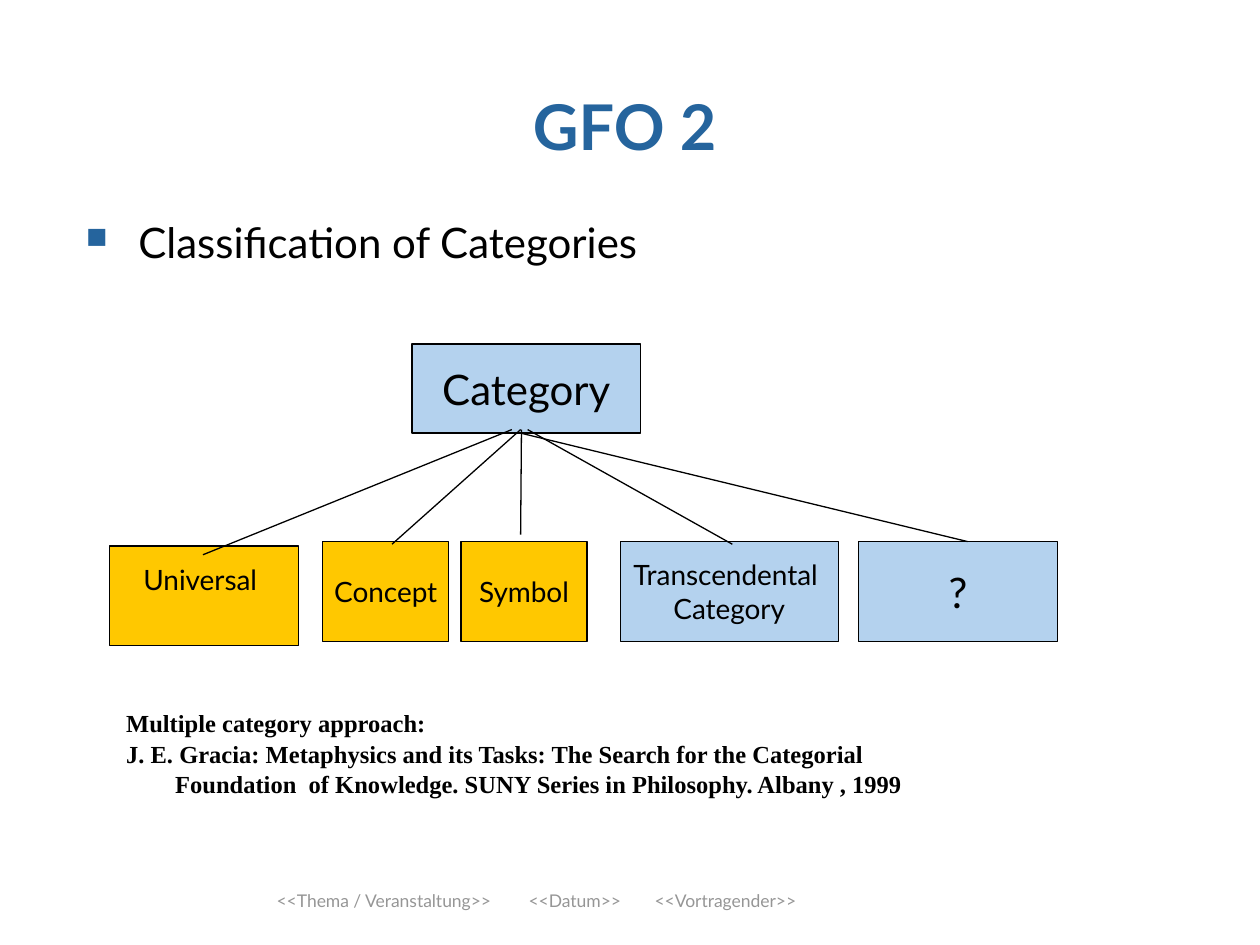
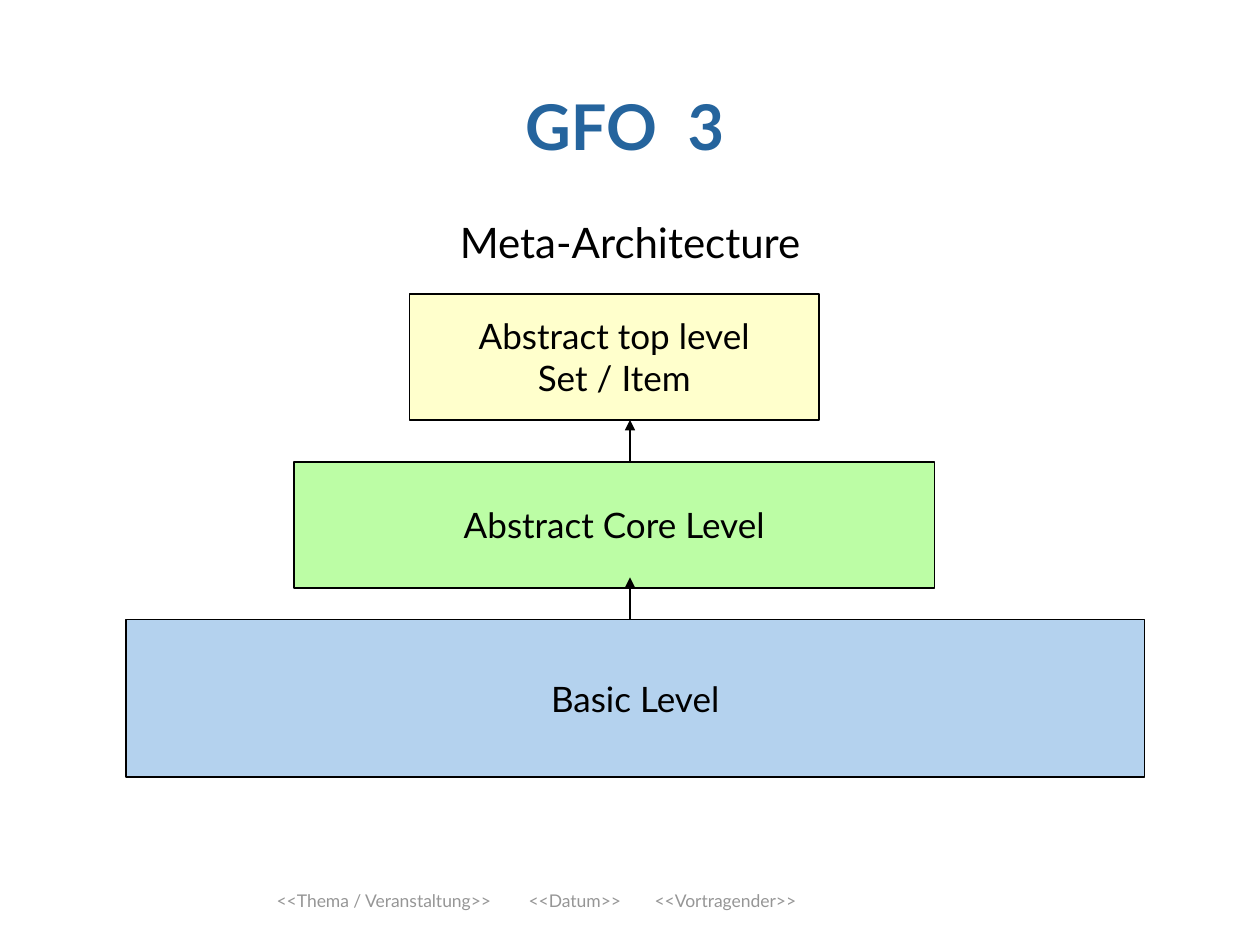
from pptx import Presentation
from pptx.dml.color import RGBColor
from pptx.enum.shapes import MSO_CONNECTOR, MSO_SHAPE
from pptx.enum.text import MSO_ANCHOR, PP_ALIGN
from pptx.oxml.ns import qn
from pptx.util import Pt
from lxml import etree

LEFT, CENTER = PP_ALIGN.LEFT, PP_ALIGN.CENTER
TOP, MIDDLE, BOTTOM = MSO_ANCHOR.TOP, MSO_ANCHOR.MIDDLE, MSO_ANCHOR.BOTTOM
RECTANGLE, STRAIGHT = MSO_SHAPE.RECTANGLE, MSO_CONNECTOR.STRAIGHT

BLACK = RGBColor(0x00, 0x00, 0x00)
GREY = RGBColor(0x96, 0x96, 0x96)
TITLE_BLUE = RGBColor(0x25, 0x64, 0x9D)
LIGHT_BLUE = RGBColor(0xB4, 0xD2, 0xEE)
AMBER = RGBColor(0xFF, 0xC8, 0x00)
CREAM = RGBColor(0xFF, 0xFF, 0xCC)
GREEN = RGBColor(0xBC, 0xFD, 0xA5)

FOOTER = "<<Thema / Veranstaltung>>\t<<Datum>>\t<<Vortragender>>"
MARGINS = {"margin_left": Pt(7.2), "margin_right": Pt(7.2),
           "margin_top": Pt(3.6), "margin_bottom": Pt(3.6)}
LINE_WIDTH = Pt(0.75)


def apply(target, values):
    for name, value in values.items():
        setattr(target, name, value)


def font_format(size, bold=False, name="Lato"):
    return {"size": Pt(size), "bold": bold, "name": name}


class Deck:
    """Holds the shared style and the slide being filled."""

    def __init__(self):
        self.presentation = Presentation()
        self.presentation.slide_width = Pt(720)
        self.presentation.slide_height = Pt(540)
        self.slide = None

    def start_slide(self, title):
        self.slide = self.presentation.slides.add_slide(
            self.presentation.slide_layouts[6])
        self.text(FOOTER, (110, 504.5, 393, 19.5), font_format(10), GREY,
                  CENTER, BOTTOM)
        self.text(title, (30, 12, 654, 84.5), font_format(36, True),
                  TITLE_BLUE, CENTER, BOTTOM)

    def fill_frame(self, frame, text, font, color, align, line_spacing=None):
        frame.text = text
        for paragraph in frame.paragraphs:
            apply(paragraph, {"alignment": align,
                              "line_spacing": line_spacing})
            for run in paragraph.runs:
                apply(run.font, font)
                run.font.color.rgb = color

    def text(self, text, bounds, font, color=BLACK, align=LEFT, anchor=TOP,
             line_spacing=None):
        frame = self.slide.shapes.add_textbox(*map(Pt, bounds)).text_frame
        apply(frame, {**MARGINS, "word_wrap": True, "vertical_anchor": anchor})
        self.fill_frame(frame, text, font, color, align, line_spacing)
        return frame.paragraphs

    def indent(self, paragraph, left, first=0):
        properties = paragraph._p.get_or_add_pPr()
        properties.set("marL", str(Pt(left)))
        properties.set("indent", str(Pt(first)))
        return properties

    def bullet(self, paragraph):
        properties = self.indent(paragraph, 30, -30)
        color = etree.SubElement(properties, qn("a:buClr"))
        etree.SubElement(color, qn("a:srgbClr"), val=str(TITLE_BLUE))
        etree.SubElement(properties, qn("a:buSzPct"), val="70000")
        etree.SubElement(properties, qn("a:buChar"), char="■")

    def box(self, text, bounds, fill, size, bottom_margin=3.6):
        box = self.slide.shapes.add_shape(RECTANGLE, *map(Pt, bounds))
        box.shadow.inherit = False
        box.fill.solid()
        box.fill.fore_color.rgb = fill
        box.line.color.rgb = BLACK
        box.line.width = LINE_WIDTH
        apply(box.text_frame, {**MARGINS, "margin_bottom": Pt(bottom_margin),
                               "word_wrap": False, "vertical_anchor": MIDDLE})
        self.fill_frame(box.text_frame, text, font_format(size), BLACK, CENTER)

    def line(self, start, end, arrow=False):
        line = self.slide.shapes.add_connector(
            STRAIGHT, *map(Pt, (*start, *end)))
        line.line.color.rgb = BLACK
        line.line.width = LINE_WIDTH
        properties = line._element.spPr
        if arrow:
            etree.SubElement(properties.find(qn("a:ln")), qn("a:tailEnd"),
                             type="triangle")
        etree.SubElement(properties, qn("a:effectLst"))


def category_slide(deck):
    deck.start_slide("GFO 2")
    heading, = deck.text("Classification of Categories",
                         (42, 120, 636, 40), font_format(24))
    deck.bullet(heading)

    deck.box("Category", (235.5, 196.5, 130.5, 51), LIGHT_BLUE, 24)
    raised_text_margin = 22.8
    deck.box("Universal ", (62.5, 312, 108, 57), AMBER, 16,
             raised_text_margin)
    for label, left, width, fill, size in (
            ("Concept", 184.5, 72, AMBER, 16),
            ("Symbol", 263.5, 72, AMBER, 16),
            ("Transcendental \nCategory", 354.5, 124.5, LIGHT_BLUE, 16),
            ("?", 490.5, 114, LIGHT_BLUE, 24)):
        deck.box(label, (left, 309.5, width, 57), fill, size)

    for parent_end, child_end in (
            ((292.5, 245.5), (116, 317)),
            ((297.5, 245.5), (224, 311)),
            ((298, 245.5), (297.5, 305.5)),
            ((301.5, 245.5), (418.5, 311)),
            ((297.5, 247.5), (553, 309.5))):
        deck.line(parent_end, child_end)

    reference = deck.text(
        "Multiple category approach:\n"
        "J. E. Gracia: Metaphysics and its Tasks: "
        "The Search for the Categorial\n"
        "Foundation  of Knowledge. SUNY Series in Philosophy. Albany , 1999",
        (65, 400.5, 527, 60), font_format(14, True, "Times New Roman"),
        line_spacing=1.04)
    deck.indent(reference[-1], 28)


def architecture_slide(deck):
    deck.start_slide("GFO  3")
    deck.text("Meta-Architecture", (42, 120, 636, 40), font_format(24),
              align=CENTER)
    levels = (
        ("Abstract top level\nSet / Item", (234, 168, 234, 72), CREAM),
        ("Abstract Core Level", (168, 264, 366, 72), GREEN),
        ("Basic Level", (72, 354, 582, 90), LIGHT_BLUE))
    for label, bounds, fill in levels:
        deck.box(label, bounds, fill, 20)
    for _, (_, top, _, _), _ in levels[1:]:
        deck.line((360, top), (360, top - 24), arrow=True)


def main():
    deck = Deck()
    category_slide(deck)
    architecture_slide(deck)
    deck.presentation.save("out.pptx")


if __name__ == "__main__":
    main()
